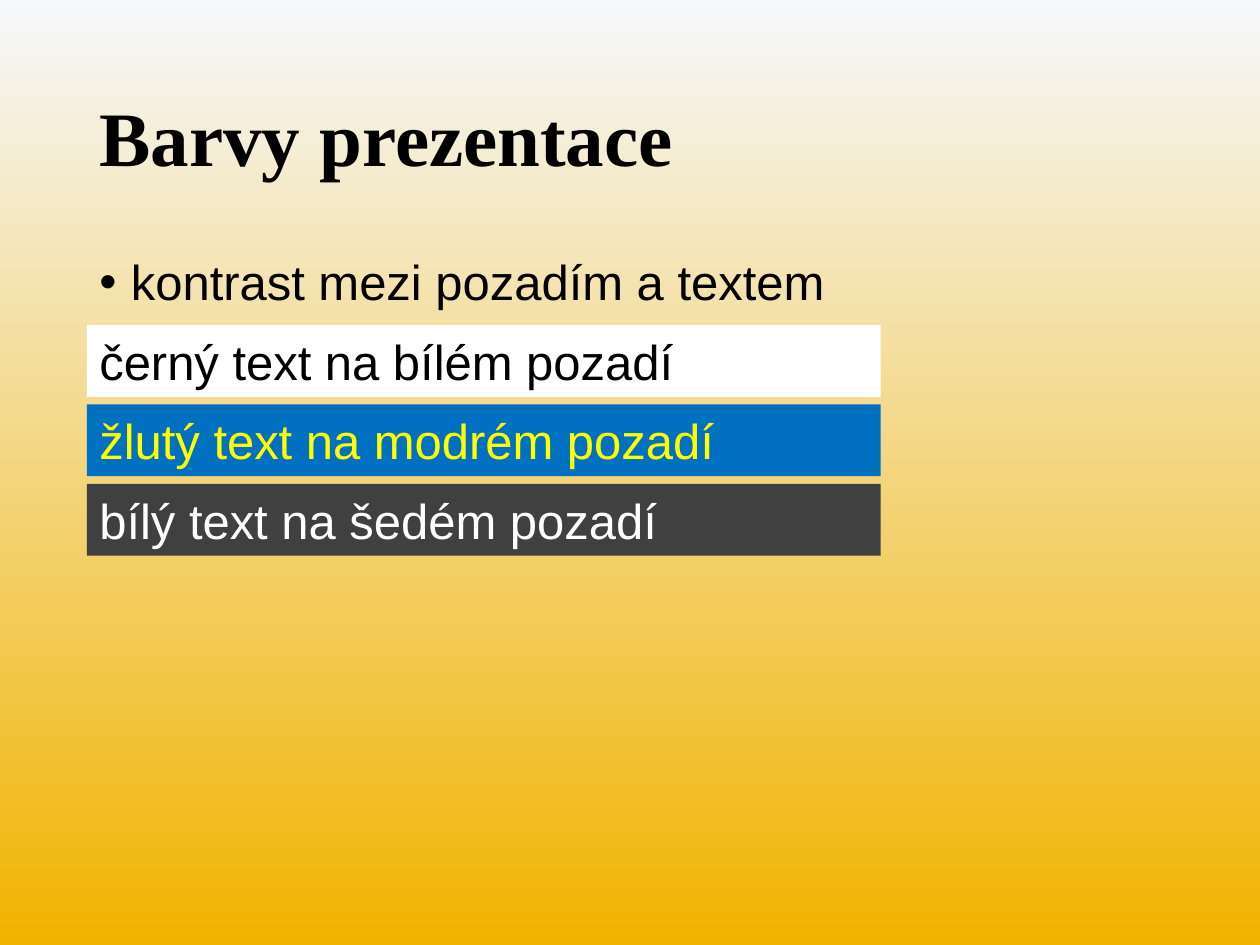
from pptx import Presentation
from pptx.dml.color import RGBColor
from pptx.enum.shapes import MSO_SHAPE
from pptx.enum.text import MSO_ANCHOR, PP_ALIGN
from pptx.oxml.ns import qn
from pptx.util import Inches, Pt
from lxml.etree import SubElement

COLORS = {
    "sky": "F6F8FC", "gold": "F1B300", "black": "000000", "white": "FFFFFF",
    "blue": "0070C0", "yellow": "FFFF00", "gray": "404040",
}
TITLE = "Barvy prezentace"
BULLET = "kontrast mezi pozadím a textem"
SAMPLES = [
    ("černý text na bílém pozadí", "black", "white"),
    ("žlutý text na modrém pozadí", "yellow", "blue"),
    ("bílý text na šedém pozadí", "white", "gray"),
]
LEFT, TEXT_WIDTH = 0.69, 8.62
BAR_TOP, BAR_WIDTH, BAR_HEIGHT, BAR_STEP = 2.58, 6.3, 0.57, 0.63
TITLE_FONT = {"name": "Times New Roman", "size": Pt(44), "bold": True}
BODY_FONT = {"name": "Arial", "size": Pt(28)}
TITLE_PARA = {"line_spacing": 0.9}
BULLET_PARA = {"line_spacing": 0.9, "space_before": Pt(10)}


def rgb(name):
    return RGBColor.from_string(COLORS[name])


def write(shape, text, font, color="black", layout=None, anchor=MSO_ANCHOR.TOP):
    frame = shape.text_frame
    frame.word_wrap = True
    frame.vertical_anchor = anchor
    para = frame.paragraphs[0]
    para.alignment = PP_ALIGN.LEFT
    for key, value in (layout or {}).items():
        setattr(para, key, value)
    span = para.add_run()
    span.text = text
    for key, value in font.items():
        setattr(span.font, key, value)
    span.font.color.rgb = rgb(color)
    return para


def add_bullet(para, indent):
    properties = para._p.get_or_add_pPr()
    properties.set("marL", str(indent))
    properties.set("indent", str(-indent))
    SubElement(properties, qn("a:buFont")).set("typeface", "Arial")
    SubElement(properties, qn("a:buChar")).set("char", "•")


def paint_background(page):
    fill = page.background.fill
    fill.gradient()
    fill.gradient_angle = 270  # counter-clockwise, so top to bottom
    for stop, position, name in zip(fill.gradient_stops, (0, 1), ("sky", "gold")):
        stop.position = position
        stop.color.rgb = rgb(name)


def main():
    deck = Presentation()
    deck.slide_width, deck.slide_height = Inches(10), Inches(7.5)
    page = deck.slides.add_slide(deck.slide_layouts[6])
    paint_background(page)

    def text_box(top, height):
        return page.shapes.add_textbox(
            Inches(LEFT), Inches(top), Inches(TEXT_WIDTH), Inches(height))

    write(text_box(0.4, 1.45), TITLE, TITLE_FONT, layout=TITLE_PARA,
          anchor=MSO_ANCHOR.MIDDLE)
    para = write(text_box(2, 4.76), BULLET, BODY_FONT, layout=BULLET_PARA)
    add_bullet(para, Inches(0.25))

    for row, (text, color, background) in enumerate(SAMPLES):
        bar = page.shapes.add_shape(
            MSO_SHAPE.RECTANGLE, Inches(LEFT), Inches(BAR_TOP + row * BAR_STEP),
            Inches(BAR_WIDTH), Inches(BAR_HEIGHT))
        bar.shadow.inherit = False
        bar.fill.solid()
        bar.fill.fore_color.rgb = rgb(background)
        bar.line.fill.background()
        write(bar, text, BODY_FONT, color)

    deck.save("out.pptx")


if __name__ == "__main__":
    main()
